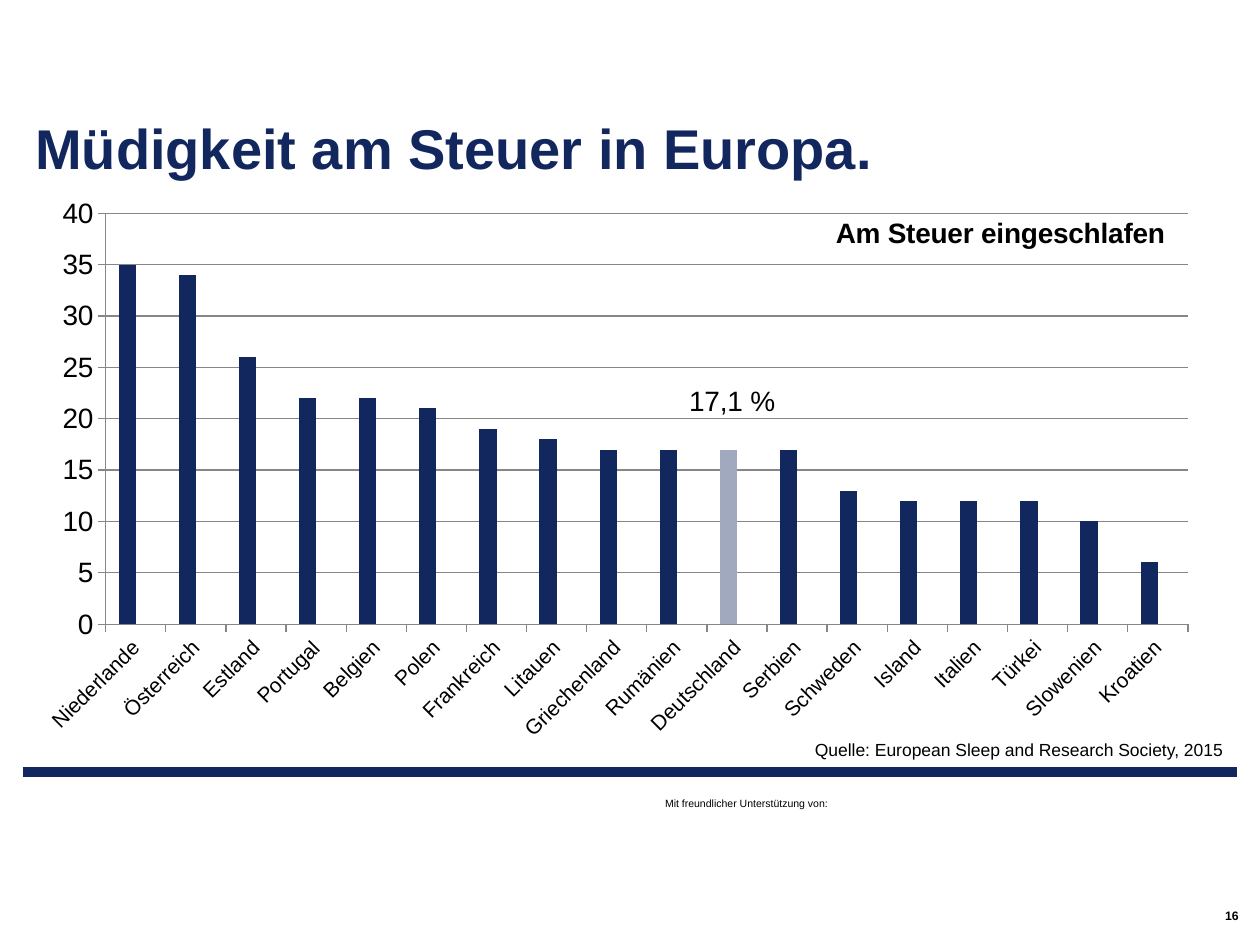
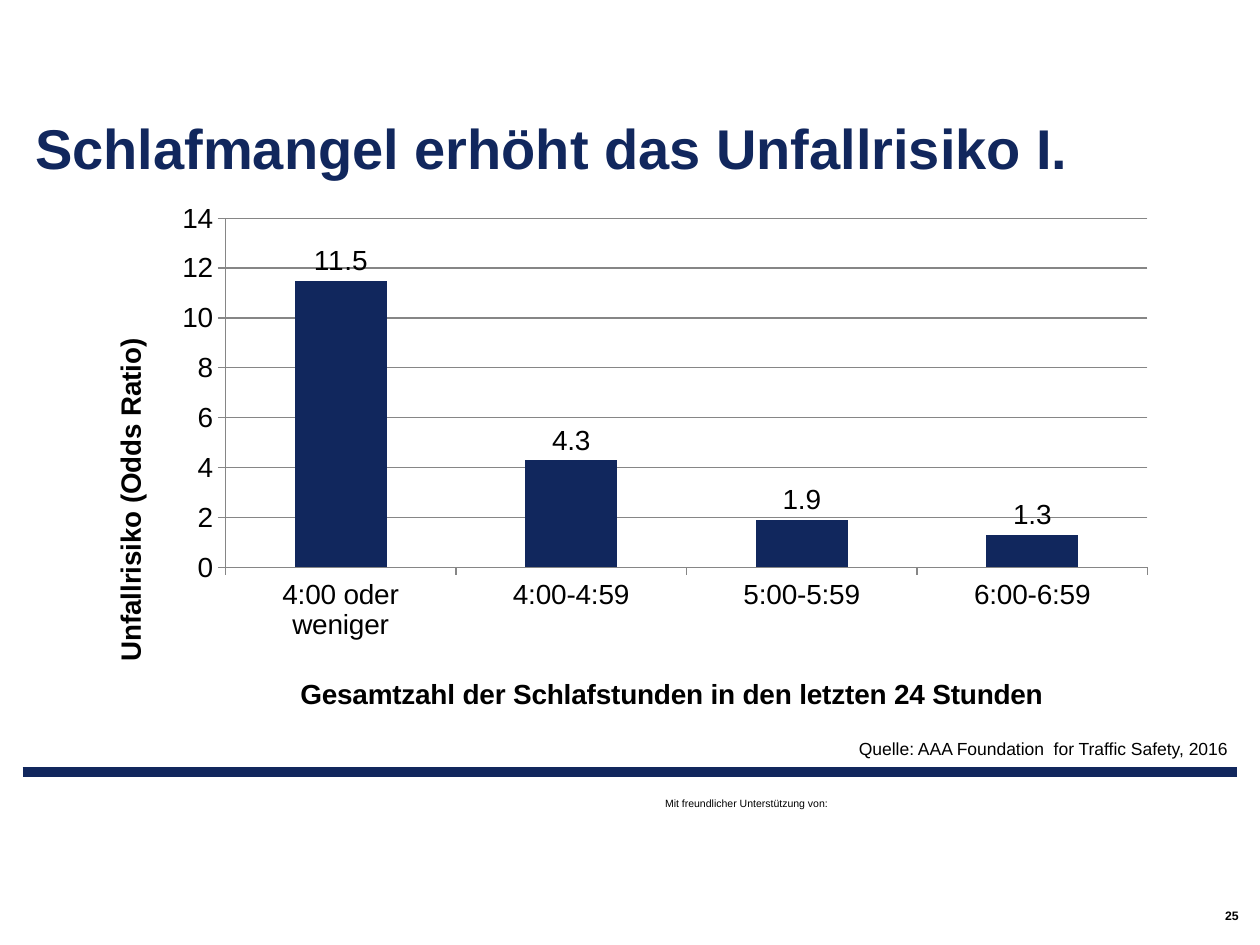
from dataclasses import dataclass
from typing import Optional

from lxml.etree import SubElement
from pptx import Presentation
from pptx.chart.data import CategoryChartData
from pptx.dml.color import RGBColor
from pptx.enum.chart import XL_CHART_TYPE, XL_LABEL_POSITION, XL_TICK_MARK
from pptx.enum.shapes import MSO_CONNECTOR
from pptx.enum.text import MSO_ANCHOR, MSO_AUTO_SIZE, PP_ALIGN
from pptx.oxml.ns import qn
from pptx.util import Inches, Pt

NAVY = RGBColor(0x11, 0x27, 0x5D)
SLATE = RGBColor(0x58, 0x67, 0x8D)
PALE_BLUE = RGBColor(0xA0, 0xA9, 0xBE)
GRID_GRAY = RGBColor(0x86, 0x86, 0x86)
BLACK = RGBColor(0, 0, 0)
FONT = "Arial"

# The slide is a grid of 10 columns by 7.5 rows
SLIDE_WIDTH, SLIDE_HEIGHT = Inches(10), Inches(7.5)
COLUMN, ROW = SLIDE_WIDTH / 10, SLIDE_HEIGHT / 7.5
LEFT_EDGE, RIGHT_EDGE = 0.18, 9.82
BAND_ROW = 6.13


@dataclass(frozen=True)
class Area:
    """A rectangle in grid columns and rows."""
    left: float
    top: float
    width: float
    height: float

    def lengths(self) -> tuple[int, int, int, int]:
        return (round(self.left * COLUMN), round(self.top * ROW),
                round(self.width * COLUMN), round(self.height * ROW))


@dataclass(frozen=True)
class ChartTitle:
    """A title placed in percent of the chart's size."""
    text: str
    left: float
    top: float


@dataclass(frozen=True)
class ChartPage:
    title: str
    number: int
    source: str
    source_area: Area
    chart_area: Area
    plot_area: tuple[float, float, float, float]  # percent of the chart
    values: dict[str, float]
    axis_maximum: float
    axis_step: float
    category_size: int = 16
    slanted: bool = False
    value_labels: bool = False
    spare_series: bool = False
    chart_title: Optional[ChartTitle] = None
    category_title: Optional[ChartTitle] = None
    value_title: Optional[ChartTitle] = None
    highlight: Optional[tuple[str, str]] = None  # category and its label


TITLE_AREA = Area(LEFT_EDGE, 0.39, 9.65, 1.05)
SUPPORT_AREA = Area(5.18, 6.28, 2.03, 0.2)
NUMBER_AREA = Area(6.45, 7.19, 3.38, 0.16)

PAGES = [
    ChartPage(
        title="Müdigkeit am Steuer in Europa.",
        number=16,
        source="Quelle: European Sleep and Research Society, 2015",
        source_area=Area(0.21, 5.82, 9.59, 0.27),
        chart_area=Area(0, 1.53, 9.93, 4.38),
        plot_area=(8.45, 3.7, 86.5, 74.5),
        values={
            "Niederlande": 35, "Österreich": 34, "Estland": 26,
            "Portugal": 22, "Belgien": 22, "Polen": 21,
            "Frankreich": 19, "Litauen": 18, "Griechenland": 17,
            "Rumänien": 17, "Deutschland": 17, "Serbien": 17,
            "Schweden": 13, "Island": 12, "Italien": 12,
            "Türkei": 12, "Slowenien": 10, "Kroatien": 6,
        },
        axis_maximum=40, axis_step=5,
        category_size=12, slanted=True, spare_series=True,
        chart_title=ChartTitle("Am Steuer eingeschlafen", 66.4, 3.1),
        highlight=("Deutschland", "17,1 %"),
    ),
    ChartPage(
        title="Schlafmangel erhöht das Unfallrisiko I.",
        number=25,
        source="Quelle: AAA Foundation  for Traffic Safety, 2016",
        source_area=Area(6.21, 5.81, 3.63, 0.27),
        chart_area=Area(0.73, 1.53, 8.54, 4.17),
        plot_area=(12.4, 4.9, 85.7, 67.1),
        values={"4:00 oder weniger": 11.5, "4:00-4:59": 4.3,
                "5:00-5:59": 1.9, "6:00-6:59": 1.3},
        axis_maximum=14, axis_step=2, value_labels=True,
        category_title=ChartTitle(
            "Gesamtzahl der Schlafstunden in den letzten 24 Stunden", 18.9, 92),
        value_title=ChartTitle("Unfallrisiko (Odds Ratio)", 1.45, 27.6),
    ),
]


def format_font(font, size: float, color: RGBColor = BLACK, bold: bool = False) -> None:
    font.name, font.size, font.bold = FONT, Pt(size), bold
    font.color.rgb = color


def write_text(frame, text: str, *, size: float, color: RGBColor = BLACK,
               bold: bool = False, align: PP_ALIGN = PP_ALIGN.LEFT,
               spacing: Optional[float] = None) -> None:
    para = frame.paragraphs[0]
    para.alignment = align
    if spacing:
        para.line_spacing = spacing
    span = para.add_run()
    span.text = text
    format_font(span.font, size, color, bold)


def add_text(page, area: Area, text: str, *, inset: bool = True,
             anchor: MSO_ANCHOR = MSO_ANCHOR.TOP, **text_format) -> None:
    frame = page.shapes.add_textbox(*area.lengths()).text_frame
    frame.word_wrap = True
    frame.vertical_anchor = anchor
    if not inset:
        frame.margin_left = frame.margin_right = 0
        frame.margin_top = frame.margin_bottom = 0
    write_text(frame, text, **text_format)


def set_layout(parent, position: int, percents: tuple[float, ...],
               *, from_edge: bool = True, inner: bool = False) -> None:
    """Place a chart part by hand: left, top and, if given, width and height."""
    for old_layout in parent.findall(qn("c:layout")):
        parent.remove(old_layout)
    layout = parent.makeelement(qn("c:layout"), {})
    parent.insert(position, layout)
    manual = SubElement(layout, qn("c:manualLayout"))
    settings = [("layoutTarget", "inner")] if inner else []
    if from_edge:
        settings += [("xMode", "edge"), ("yMode", "edge")]
    settings += [(name, str(round(percent / 100, 4)))
                 for name, percent in zip("xywh", percents)]
    for name, value in settings:
        SubElement(manual, qn(f"c:{name}")).set("val", value)


def write_chart_title(title, content: ChartTitle, *, overlay: bool = False,
                      upright: bool = False) -> None:
    frame = title.text_frame
    write_text(frame, content.text, size=16, bold=True, align=PP_ALIGN.CENTER)
    if upright:
        frame._txBody.bodyPr.set("rot", "-5400000")
        frame._txBody.bodyPr.set("vert", "horz")
    element = title._element
    set_layout(element, 1, (content.left, content.top))
    if overlay:
        element.find(qn("c:overlay")).set("val", "1")


def format_axis(axis, size: float) -> None:
    axis.major_tick_mark = XL_TICK_MARK.OUTSIDE
    axis.format.line.color.rgb = GRID_GRAY
    format_font(axis.tick_labels.font, size)


def add_column_chart(page, content: ChartPage) -> None:
    chart_data = CategoryChartData(number_format="General")
    chart_data.categories = list(content.values)
    chart_data.add_series("Series 1", list(content.values.values()))
    if content.spare_series:
        chart_data.add_series("Series 2", [None] * len(content.values))
    chart = page.shapes.add_chart(XL_CHART_TYPE.COLUMN_CLUSTERED,
                                  *content.chart_area.lengths(), chart_data).chart
    format_font(chart.font, 18)
    chart.has_legend = False
    chart.has_title = content.chart_title is not None
    if content.chart_title:
        write_chart_title(chart.chart_title, content.chart_title, overlay=True)
    plot_element = chart._chartSpace.chart.plotArea
    set_layout(plot_element, 0, content.plot_area, inner=True)

    # Axes
    categories, scale = chart.category_axis, chart.value_axis
    format_axis(categories, content.category_size)
    format_axis(scale, 16)
    scale.minimum_scale, scale.maximum_scale = 0, content.axis_maximum
    scale.major_unit = content.axis_step
    scale.has_major_gridlines = True
    scale.major_gridlines.format.line.color.rgb = GRID_GRAY
    if content.slanted:
        categories._element.txPr.bodyPr.set("rot", "-2700000")
    if content.category_title:
        write_chart_title(categories.axis_title, content.category_title)
    if content.value_title:
        write_chart_title(scale.axis_title, content.value_title, upright=True)

    # Columns and their labels
    plot = chart.plots[0]
    plot.vary_by_categories = False
    plot.gap_width = 150
    for series, color in zip(plot.series, (NAVY, SLATE)):
        series.format.fill.solid()
        series.format.fill.fore_color.rgb = color
    columns = plot.series[0]
    if content.value_labels:
        labels = columns.data_labels
        labels.show_value = True
        labels.position = XL_LABEL_POSITION.OUTSIDE_END
        format_font(labels.font, 16)
    if content.highlight:
        category, label_text = content.highlight
        point = columns.points[list(content.values).index(category)]
        point.format.fill.solid()
        point.format.fill.fore_color.rgb = PALE_BLUE
        labels = columns.data_labels
        labels.show_value = False
        for leader_lines in labels._element.findall(qn("c:showLeaderLines")):
            leader_lines.set("val", "0")
        label = point.data_label
        write_text(label.text_frame, label_text, size=16, align=PP_ALIGN.CENTER)
        label.position = XL_LABEL_POSITION.OUTSIDE_END
        label_element = label.text_frame._txBody.getparent().getparent()
        set_layout(label_element, 1, (0.3, -5), from_edge=False)


def add_frame(page, title: str, number: int) -> None:
    """Title, band, support line and page number shared by all pages."""
    band = page.shapes.add_connector(
        MSO_CONNECTOR.STRAIGHT, round(LEFT_EDGE * COLUMN), round(BAND_ROW * ROW),
        round(RIGHT_EDGE * COLUMN), round(BAND_ROW * ROW))
    band.line.color.rgb = NAVY
    band.line.width = Pt(5.67)
    SubElement(band._element.spPr, qn("a:effectLst"))
    add_text(page, SUPPORT_AREA, "Mit freundlicher Unterstützung von:", size=6)

    box = page.shapes.title
    box.left, box.top, box.width, box.height = TITLE_AREA.lengths()
    frame = box.text_frame
    frame.word_wrap = True
    frame.auto_size = MSO_AUTO_SIZE.NONE
    frame.vertical_anchor = MSO_ANCHOR.BOTTOM
    frame.margin_left = frame.margin_right = Inches(0.1)
    frame.margin_top = frame.margin_bottom = 0
    write_text(frame, title, size=32, color=NAVY, bold=True, spacing=0.9)

    add_text(page, NUMBER_AREA, str(number), inset=False, anchor=MSO_ANCHOR.MIDDLE,
             size=7, bold=True, align=PP_ALIGN.RIGHT)


def main() -> None:
    deck = Presentation()
    deck.slide_width, deck.slide_height = SLIDE_WIDTH, SLIDE_HEIGHT
    title_only = deck.slide_layouts[5]
    for content in PAGES:
        page = deck.slides.add_slide(title_only)
        add_frame(page, content.title, content.number)
        add_column_chart(page, content)
        add_text(page, content.source_area, content.source, size=10,
                 align=PP_ALIGN.RIGHT)
    deck.save("out.pptx")


if __name__ == "__main__":
    main()
